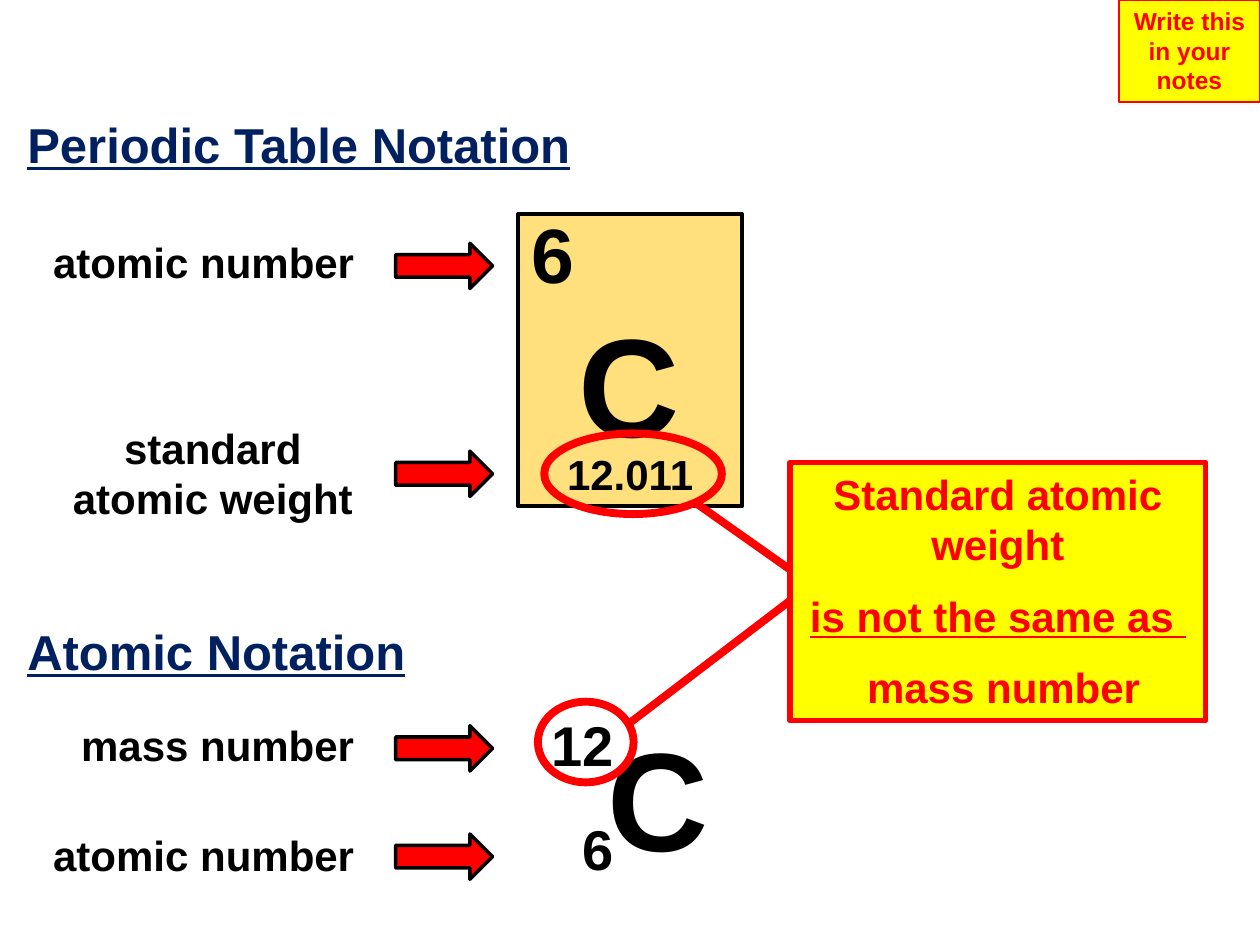
"""Build a slide comparing periodic table notation with atomic notation for carbon."""
import lxml.etree
import pptx
import pptx.dml.color
import pptx.enum.shapes
import pptx.enum.text
import pptx.oxml.ns
import pptx.util

Pt = pptx.util.Pt
SHAPES = pptx.enum.shapes.MSO_SHAPE
ALIGN = pptx.enum.text.PP_ALIGN
COLOURS = {"black": "000000", "red": "FF0000", "yellow": "FFFF00",
           "gold": "FFE07D", "navy": "002060"}
RGB = {name: pptx.dml.color.RGBColor.from_string(value) for name, value in COLOURS.items()}

presentation = pptx.Presentation()
presentation.slide_width, presentation.slide_height = Pt(720), Pt(540)
slide = presentation.slides.add_slide(presentation.slide_layouts[6])


def add_shape(kind, box, fill, line, width):
    shape = slide.shapes.add_shape(kind, *map(Pt, box))
    shape.shadow.inherit = False
    if fill:
        shape.fill.solid()
        shape.fill.fore_color.rgb = RGB[fill]
    else:
        shape.fill.background()
    shape.line.color.rgb = RGB[line]
    shape.line.width = Pt(width)
    return shape


def write(shape, lines, size, colour, align, wrap=False, underlined=(), space=0):
    frame = shape.text_frame
    frame.word_wrap = wrap
    frame.vertical_anchor = pptx.enum.text.MSO_ANCHOR.TOP
    for index, line in enumerate(lines):
        paragraph = frame.paragraphs[0] if index == 0 else frame.add_paragraph()
        paragraph.alignment = align
        paragraph.space_before = Pt(space)
        run = paragraph.add_run()
        run.text = line
        run.font.name = "Arial"
        run.font.size = Pt(size)
        run.font.bold = True
        run.font.underline = index in underlined
        run.font.color.rgb = RGB[colour]


add_shape(SHAPES.RECTANGLE, (295.9, 122.4, 128.2, 167), "gold", "black", 2.25)

for top in (139, 257.8, 414.7, 476.6):
    add_shape(SHAPES.RIGHT_ARROW, (226.1, top, 55.4, 25.9), "red", "black", 2)

labels = [
    (["12.011"], (316.1, 252.7, 87.1, 36), 24, ALIGN.RIGHT),
    (["6"], (295.9, 114.5, 39.6, 60.5), 44, ALIGN.RIGHT),
    (["C"], (323.3, 166.3, 72.7, 104.4), 80, ALIGN.LEFT),
    (["12"], (307.4, 402.5, 50.4, 46.1), 32, ALIGN.RIGHT),
    (["6"], (325.4, 462.2, 32.4, 46.1), 32, ALIGN.RIGHT),
    (["C"], (339.8, 403.2, 72.7, 104.4), 80, ALIGN.LEFT),
    (["atomic number"], (21.6, 131.8, 187.9, 36.7), 24, ALIGN.RIGHT),
    (["standard", "atomic weight"], (33.8, 237.6, 175.7, 65.5), 24, ALIGN.CENTER),
    (["mass number"], (37.4, 407.5, 172.1, 36.7), 24, ALIGN.RIGHT),
    (["atomic number"], (21.6, 470.2, 187.9, 36.7), 24, ALIGN.RIGHT),
]
for lines, box, size, align in labels:
    write(slide.shapes.add_textbox(*map(Pt, box)), lines, size, "black", align)

headings = [("Periodic Table Notation", 61.9, 328.3), ("Atomic Notation", 351.4, 233.3)]
for heading, top, width in headings:
    textbox = slide.shapes.add_textbox(Pt(8.6), Pt(top), Pt(width), Pt(41))
    write(textbox, [heading], 28, "navy", ALIGN.LEFT, underlined=(0,))

for ring in ((311, 247.7, 101.5, 46.1), (307.4, 401, 54.7, 46.1)):
    add_shape(SHAPES.OVAL, ring, None, "red", 4.5)

for ends in ((452.2, 342.7, 357.8, 414.7), (463.7, 334.1, 397.4, 287.3)):
    connector = slide.shapes.add_connector(
        pptx.enum.shapes.MSO_CONNECTOR.STRAIGHT, *map(Pt, ends))
    connector.line.color.rgb = RGB["red"]
    connector.line.width = Pt(4.5)
    lxml.etree.SubElement(connector._element.spPr, pptx.oxml.ns.qn("a:effectLst"))

callout = add_shape(SHAPES.RECTANGLE, (451.4, 264.2, 237.6, 147.6), "yellow", "red", 3)
write(callout, ["Standard atomic weight", "is not the same as ", " mass number"],
      24, "red", ALIGN.CENTER, wrap=True, underlined=(1,), space=12)

reminder = add_shape(SHAPES.RECTANGLE, (639.4, 0, 80.6, 58.3), "yellow", "red", 0.75)
write(reminder, ["Write this in your notes"], 14, "red", ALIGN.CENTER, wrap=True)

presentation.save("out.pptx")
